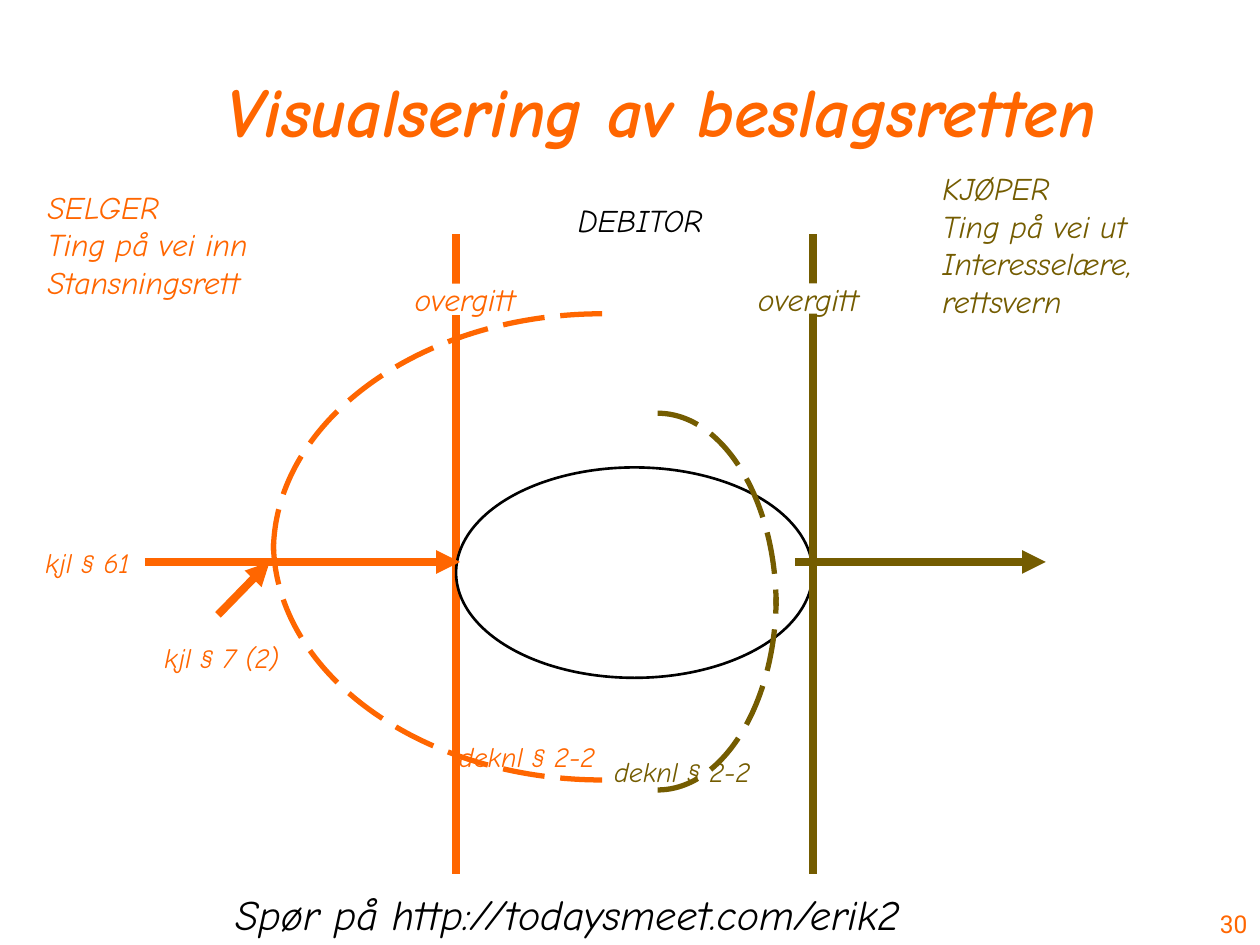
"""Builds a slide that maps the creditors' right of seizure between seller, debtor and buyer."""
import pptx
import pptx.util
import pptx.dml.color
import pptx.enum.dml
import pptx.enum.shapes
import pptx.enum.text
import pptx.oxml
import pptx.oxml.ns

COLORS = {"seller": "FF6600", "buyer": "745C00", "debtor": "000000", "paper": "FFFFFF"}
RGB = {role: pptx.dml.color.RGBColor.from_string(code) for role, code in COLORS.items()}
ALIGN = pptx.enum.text.PP_ALIGN
ANCHOR = pptx.enum.text.MSO_ANCHOR
SHAPE = pptx.enum.shapes.MSO_SHAPE
NAMESPACE = pptx.oxml.ns.nsdecls("a")

deck = pptx.Presentation()
deck.slide_width = pptx.util.Inches(10)
deck.slide_height = pptx.util.Inches(7.5)
slide = deck.slides.add_slide(deck.slide_layouts[6])
column = deck.slide_width / 10
row = deck.slide_height / 7.5


def write(wording, left, top, width, height, size, role, align=ALIGN.CENTER,
          anchor=ANCHOR.MIDDLE, wrap=False, backed=True, bold=False, italic=True,
          font="Comic Neue"):
    area = [round(left * column), round(top * row), round(width * column), round(height * row)]
    if backed:
        label = slide.shapes.add_shape(SHAPE.RECTANGLE, *area)
        label.shadow.inherit = False
        label.fill.solid()
        label.fill.fore_color.rgb = RGB["paper"]
        label.line.fill.background()
    else:
        label = slide.shapes.add_textbox(*area)
    frame = label.text_frame
    frame.word_wrap = wrap
    frame.vertical_anchor = anchor
    frame.text = wording
    for paragraph in frame.paragraphs:
        paragraph.alignment = align
        for run in paragraph.runs:
            run.font.name = font
            run.font.size = pptx.util.Pt(size)
            run.font.bold = bold
            run.font.italic = italic
            run.font.color.rgb = RGB[role]


def draw_line(x1, y1, x2, y2, role, arrow=False):
    line = slide.shapes.add_connector(
        pptx.enum.shapes.MSO_CONNECTOR.STRAIGHT,
        round(x1 * column), round(y1 * row), round(x2 * column), round(y2 * row))
    line.line.color.rgb = RGB[role]
    line.line.width = pptx.util.Pt(4.5)
    if arrow:
        head = pptx.oxml.parse_xml(f'<a:tailEnd {NAMESPACE} type="triangle"/>')
        line.line._get_or_add_ln().append(head)
    line._element.spPr.append(pptx.oxml.parse_xml(f'<a:effectLst {NAMESPACE}/>'))


write("Spør på http://todaysmeet.com/erik2", 1.77, 7, 6.17, 0.5, 24, "debtor",
      align=ALIGN.LEFT, anchor=ANCHOR.TOP, backed=False)
write("30", 9.33, 7, 0.67, 0.5, 14, "seller", align=ALIGN.RIGHT, anchor=ANCHOR.BOTTOM,
      wrap=True, backed=False, italic=False, font="Roboto")
write("SELGER\vTing på vei inn\nStansningsrett", 0.28, 1.31, 2.62, 1.26, 18, "seller",
      align=ALIGN.LEFT)
draw_line(3.62, 1.86, 3.62, 6.94, "seller")
write("overgitt", 3.18, 2.25, 1.02, 0.25, 18, "seller")

estate = slide.shapes.add_shape(SHAPE.OVAL, round(3.62 * column), round(3.71 * row),
                                round(2.83 * column), round(1.67 * row))
estate.shadow.inherit = False
estate.fill.solid()
estate.fill.fore_color.rgb = RGB["paper"]
estate.line.color.rgb = RGB["debtor"]
estate.line.width = pptx.util.Pt(1.5)
write("DEBITOR", 4.37, 1.62, 1.42, 0.25, 18, "debtor")

draw_line(1.15, 4.46, 3.65, 4.46, "seller", arrow=True)
write("kjl § 61", 0.28, 4.3, 0.83, 0.33, 16, "seller")
write("Visualsering av beslagsretten", 1, 0, 8.5, 1.25, 40, "seller",
      anchor=ANCHOR.BOTTOM, wrap=True, backed=False, bold=True)
draw_line(1.73, 4.88, 2.14, 4.46, "seller", arrow=True)
write("kjl § 7 (2)", 1.22, 5.09, 1.08, 0.25, 16, "seller")
write("deknl § 2-2 ", 3.76, 5.88, 0.92, 0.25, 16, "seller")
write("KJØPER\vTing på vei ut\nInteresselære,\vrettsvern", 7.38, 1.31, 2.62, 1.26, 18,
      "buyer", align=ALIGN.LEFT)
draw_line(6.45, 1.86, 6.45, 6.94, "buyer")
write("overgitt", 5.87, 2.25, 1.09, 0.24, 18, "buyer")
write("deknl § 2-2", 5.25, 6.02, 0.33, 0.2, 16, "buyer")

roundness = 0.55
for role, start_x, start_y, tip_x, tip_y in [
    ("seller", 4.78, 2.49, 2.17, 4.38),
    ("seller", 4.78, 6.19, 2.17, 4.3),
    ("buyer", 5.22, 3.28, 6.16, 4.81),
    ("buyer", 5.22, 6.27, 6.16, 4.74),
]:
    builder = slide.shapes.build_freeform(round(start_x * column), round(start_y * row))
    builder.add_line_segments([(round(tip_x * column), round(tip_y * row))], close=False)
    reach = builder.convert_to_shape()
    reach.shadow.inherit = False
    reach.fill.background()
    reach.line.color.rgb = RGB[role]
    reach.line.width = pptx.util.Pt(3)
    reach.line.dash_style = pptx.enum.dml.MSO_LINE.LONG_DASH

    (x1, y1), (x2, y2) = [(int(point.get("x")), int(point.get("y")))
                          for point in reach._element.xpath(".//a:path//a:pt")]
    bend = [(x1 + (x2 - x1) * roundness, y1), (x2, y2 + (y1 - y2) * roundness), (x2, y2)]
    stops = "".join(f'<a:pt x="{round(x)}" y="{round(y)}"/>' for x, y in bend)
    curve = pptx.oxml.parse_xml(f'<a:cubicBezTo {NAMESPACE}>{stops}</a:cubicBezTo>')
    straight = reach._element.xpath(".//a:lnTo")[0]
    straight.getparent().replace(straight, curve)

draw_line(6.31, 4.46, 8.3, 4.46, "buyer", arrow=True)

deck.save("out.pptx")
